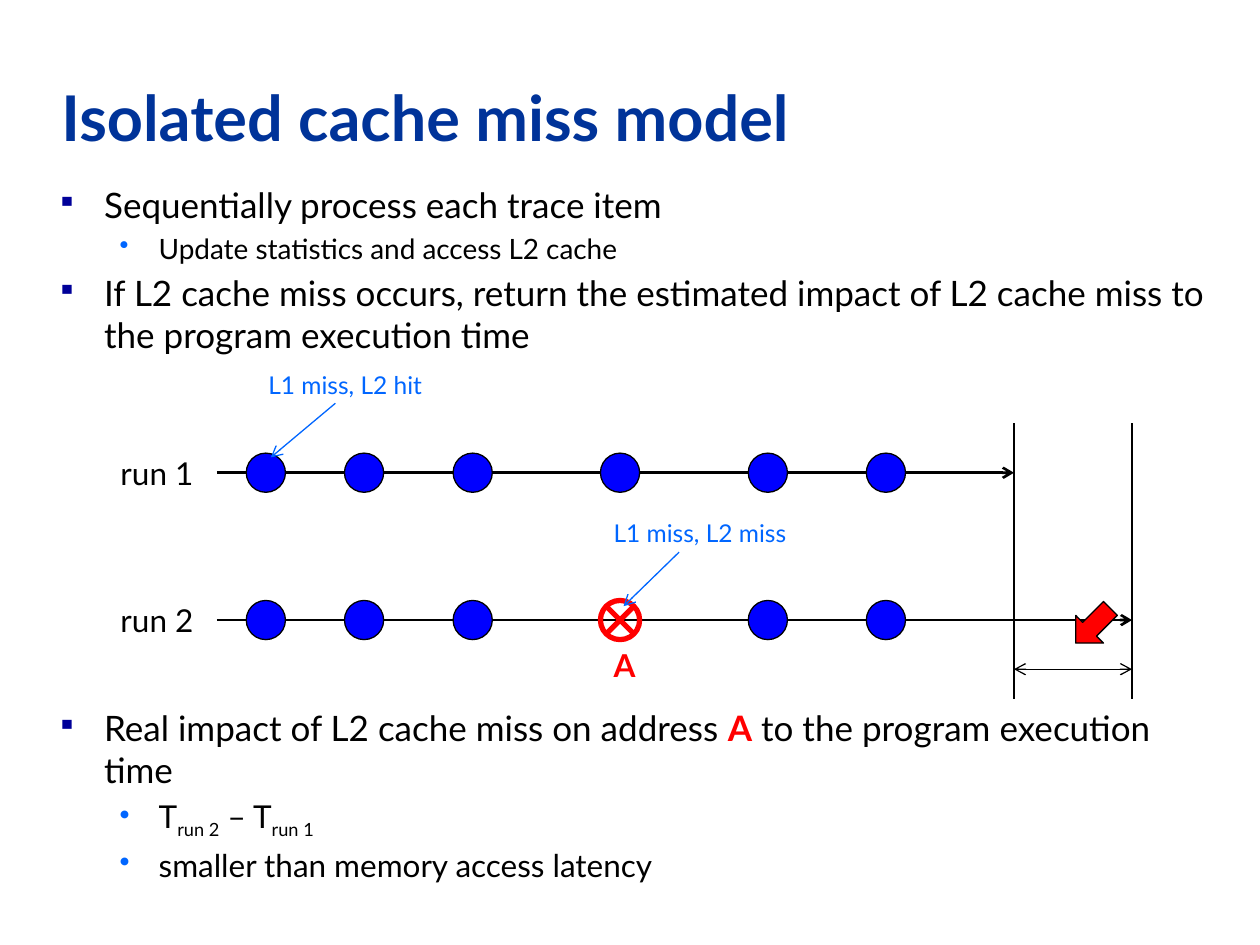
from dataclasses import dataclass

import pptx
import pptx.dml.color
import pptx.enum.shapes
import pptx.enum.text
import pptx.oxml.ns
import pptx.util
from lxml import etree

Cm, Pt = pptx.util.Cm, pptx.util.Pt
RGB = pptx.dml.color.RGBColor
SHAPE = pptx.enum.shapes.MSO_SHAPE
ANCHOR = pptx.enum.text.MSO_ANCHOR
qn = pptx.oxml.ns.qn


@dataclass(frozen=True)
class Theme:
    font: str = "Lato"
    white: str = "FFFFFF"
    black: str = "000000"
    title: str = "003399"
    bullet: str = "000099"
    accent: str = "0066FF"
    hit: str = "0000FF"
    miss: str = "FF0000"
    title_size: float = 36
    body_size: float = 20
    sub_size: float = 18
    detail_size: float = 16
    note_size: float = 14
    thin: float = 0.75
    axis: float = 1.5
    thick: float = 3


@dataclass(frozen=True)
class Span:
    text: str
    color: str = "000000"
    bold: bool = False
    subscript: bool = False


@dataclass(frozen=True)
class Item:
    spans: tuple[Span, ...]
    size: float
    level: int = 0


@dataclass(frozen=True)
class BulletStyle:
    char: str
    color: str
    percent: int
    left: float
    hanging: float


@dataclass(frozen=True)
class Run:
    label: str
    y: float
    end: float
    misses: tuple[float, ...] = ()


T = Theme()
BULLETS = (
    BulletStyle("▪", T.bullet, 80, 0.96, 0.96),
    BulletStyle("•", T.accent, 95, 2.06, 0.79),
)
EVENTS = (5.36, 7.34, 9.53, 12.5, 15.48, 17.86)
DOT = 0.79
AXIS_START = 4.37
RUNS = (
    Run("run 1", 9.53, 20.44),
    Run("run 2", 12.5, 22.82, misses=(12.5,)),
)
INTRO = (
    Item((Span("Sequentially process each trace item"),), T.body_size),
    Item((Span("Update statistics and access L2 cache"),), T.detail_size, 1),
    Item((Span("If L2 cache miss occurs, return the estimated impact of "
               "L2 cache miss to the program execution time"),), T.body_size),
)
CONCLUSION = (
    Item((Span("Real impact of L2 cache miss on address "),
          Span("A", T.miss, bold=True),
          Span(" to the program execution time")), T.body_size),
    Item((Span("T"), Span("run 2", subscript=True),
          Span(" – T"), Span("run 1", subscript=True)), T.sub_size, 1),
    Item((Span("smaller than memory access latency"),), T.sub_size, 1),
)


def style_font(font, size: float, color: str, bold: bool = False) -> None:
    font.name, font.size, font.bold = T.font, Pt(size), bold
    font.color.rgb = RGB.from_string(color)


def add_text(s, box: tuple[float, ...], text: str, size: float, color: str,
             bold: bool = False, anchor=ANCHOR.TOP) -> None:
    tf = s.shapes.add_textbox(*map(Cm, box)).text_frame
    tf.word_wrap = True
    tf.vertical_anchor = anchor
    tf.text = text
    style_font(tf.paragraphs[0].runs[0].font, size, color, bold)


def add_bullet(p, style: BulletStyle) -> None:
    pPr = p._p.get_or_add_pPr()
    pPr.set("marL", str(Cm(style.left)))
    pPr.set("indent", str(-Cm(style.hanging)))
    color = etree.SubElement(pPr, qn("a:buClr"))
    etree.SubElement(color, qn("a:srgbClr"), val=style.color)
    etree.SubElement(pPr, qn("a:buSzPct"), val=str(style.percent * 1000))
    etree.SubElement(pPr, qn("a:buChar"), char=style.char)


def add_items(s, box: tuple[float, ...], items: tuple[Item, ...]) -> None:
    tf = s.shapes.add_textbox(*map(Cm, box)).text_frame
    tf.word_wrap = True
    for i, item in enumerate(items):
        p = tf.add_paragraph() if i else tf.paragraphs[0]
        p.level = item.level
        add_bullet(p, BULLETS[item.level])
        if i:
            p.space_before = Pt(0.2 * item.size)
        for span in item.spans:
            r = p.add_run()
            r.text = span.text
            style_font(r.font, item.size, span.color, span.bold)
            if span.subscript:
                r._r.get_or_add_rPr().set("baseline", "-25000")


def add_line(s, start: tuple[float, float], end: tuple[float, float],
             color: str = T.black, width: float = T.thin,
             arrows: tuple[str, ...] = ()) -> None:
    """Draw a line; arrows may hold headEnd (start) and tailEnd (end)."""
    c = s.shapes.add_connector(pptx.enum.shapes.MSO_CONNECTOR.STRAIGHT,
                               *map(Cm, start + end))
    c.line.color.rgb = RGB.from_string(color)
    c.line.width = Pt(width)
    ln = c.line._get_or_add_ln()
    for arrow in arrows:
        etree.SubElement(ln, qn(f"a:{arrow}"), type="arrow")
    etree.SubElement(c._element.spPr, qn("a:effectLst"))


def add_shape(s, kind, box: tuple[float, ...], fill: str | None,
              line: str = T.black, width: float = T.thin):
    sp = s.shapes.add_shape(kind, *map(Cm, box))
    sp.shadow.inherit = False
    if fill:
        sp.fill.solid()
        sp.fill.fore_color.rgb = RGB.from_string(fill)
    else:
        sp.fill.background()
    sp.line.color.rgb = RGB.from_string(line)
    sp.line.width = Pt(width)
    return sp


def add_event(s, x: float, y: float, miss: bool) -> None:
    box = (x - DOT / 2, y - DOT / 2, DOT, DOT)
    if not miss:
        add_shape(s, SHAPE.OVAL, box, T.hit)
        return
    add_shape(s, SHAPE.OVAL, box, None, T.miss, T.thick)
    d = 0.28
    for side in (d, -d):
        add_line(s, (x + side, y - d), (x - side, y + d), T.miss, T.thick)


def add_timeline(s, run: Run) -> None:
    add_line(s, (AXIS_START, run.y), (run.end, run.y), width=T.axis,
             arrows=("tailEnd",))
    sp = add_shape(s, SHAPE.RECTANGLE, (2.18, run.y - 0.8, 1.98, 1.6),
                   T.white, T.white)
    tf = sp.text_frame
    tf.word_wrap = False
    tf.vertical_anchor = ANCHOR.MIDDLE
    tf.text = run.label
    style_font(tf.paragraphs[0].runs[0].font, T.sub_size, T.black)
    for x in EVENTS:
        add_event(s, x, run.y, x in run.misses)


def main() -> None:
    prs = pptx.Presentation()
    prs.slide_width, prs.slide_height = Cm(25.4), Cm(19.05)
    s = prs.slides.add_slide(prs.slide_layouts[6])

    add_text(s, (0.99, 0.76, 23.42, 3.18), "Isolated cache miss model",
             T.title_size, T.title, True, ANCHOR.MIDDLE)
    add_items(s, (0.89, 3.58, 23.8, 3.7), INTRO)
    add_items(s, (0.89, 14.12, 23.8, 3.9), CONCLUSION)

    for run in RUNS:
        add_timeline(s, run)

    add_text(s, (12.12, 12.9, DOT, 0.99), "A", T.sub_size, T.miss, True)
    add_text(s, (5.16, 7.34, 3.96, 0.99), "L1 miss, L2 hit",
             T.note_size, T.accent)
    add_text(s, (12.12, 10.31, 4.37, 0.99), "L1 miss, L2 miss",
             T.note_size, T.accent)
    for start, end in (((6.76, 8.13), (5.46, 9.22)),
                       ((13.69, 11.13), (12.57, 12.22))):
        add_line(s, start, end, T.accent, arrows=("tailEnd",))

    ends = [run.end for run in RUNS]
    for x in ends:
        add_line(s, (x, 8.53), (x, 14.1))
    add_line(s, (ends[0], 13.49), (ends[1], 13.49),
             arrows=("headEnd", "tailEnd"))
    pointer = add_shape(s, SHAPE.DOWN_ARROW, (21.64, 12.12, DOT, 0.99), T.miss)
    pointer.rotation = 45

    prs.save("out.pptx")


if __name__ == "__main__":
    main()
